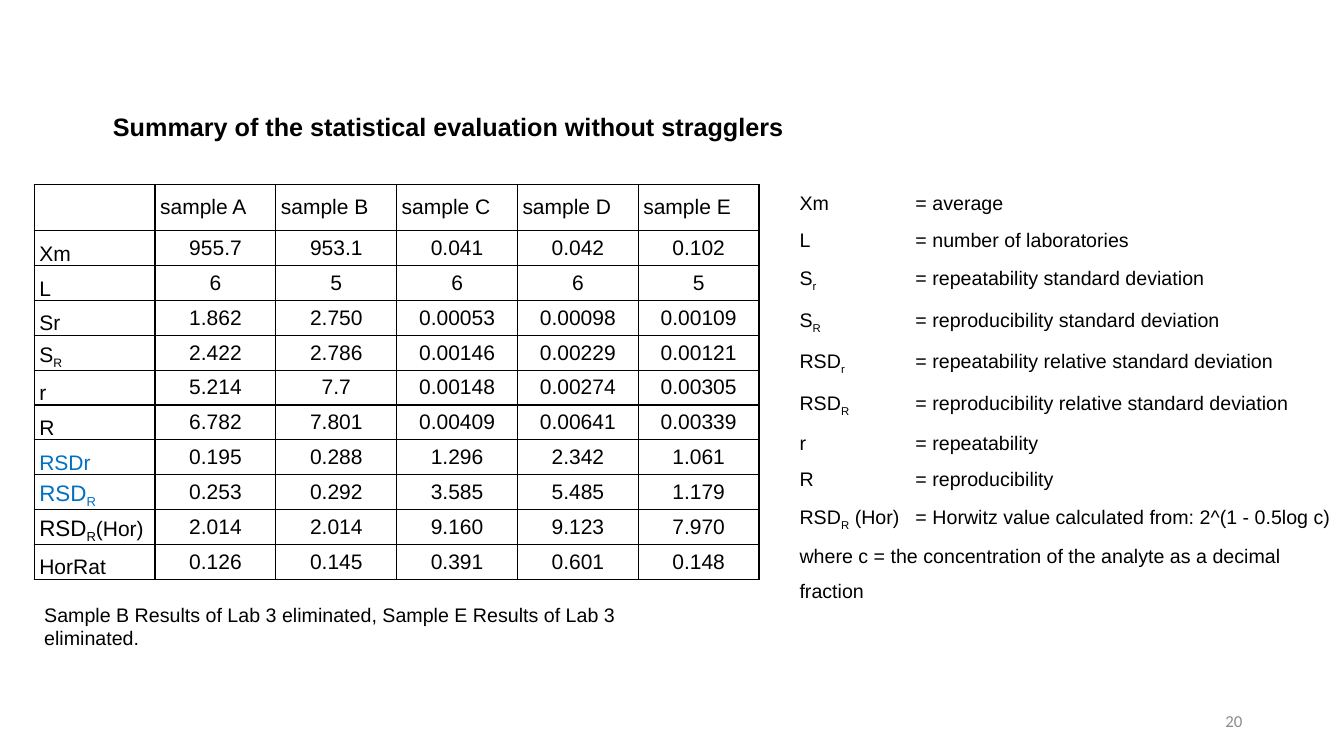
from dataclasses import dataclass

from lxml.etree import SubElement
from pptx import Presentation
from pptx.dml.color import RGBColor
from pptx.enum.text import MSO_ANCHOR as Anchor, MSO_AUTO_SIZE as AutoSize, PP_ALIGN as Align
from pptx.oxml.ns import qn
from pptx.util import Emu, Pt

EMU_PER_PX = 9144
BLACK = "000000"
BLUE = "0070C0"
GREY = "8C8C8C"
SUBSCRIPT_MARK = "~"


@dataclass(frozen=True)
class Box:
    left: int
    top: int
    width: int
    height: int


@dataclass(frozen=True)
class ResultRow:
    label: str
    values: str
    color: str = BLACK
    size: int = 15
    suffix: str = ""


@dataclass(frozen=True)
class Definition:
    symbol: str
    meaning: str


SLIDE_WIDTH, SLIDE_HEIGHT = 1333, 750
TITLE_BOX = Box(102, 105, 839, 40)
TABLE_BOX = Box(34, 183, 719, 392)
NOTE_BOX = Box(34, 593, 667, 57)
LEGEND_BOX = Box(646, 173, 688, 410)
NUMBER_BOX = Box(942, 695, 300, 40)
HEADER_HEIGHT = 46
LEGEND_INSET = 147
LEGEND_TAB = 115

SAMPLES = [f"sample {letter}" for letter in "ABCDE"]
RESULTS = [
    ResultRow("Xm", "955.7 953.1 0.041 0.042 0.102"),
    ResultRow("L", "6 5 6 6 5"),
    ResultRow("Sr", "1.862 2.750 0.00053 0.00098 0.00109"),
    ResultRow("S~R~", "2.422 2.786 0.00146 0.00229 0.00121"),
    ResultRow("r", "5.214 7.7 0.00148 0.00274 0.00305"),
    ResultRow("R", "6.782 7.801 0.00409 0.00641 0.00339"),
    ResultRow("RSDr", "0.195 0.288 1.296 2.342 1.061", color=BLUE),
    ResultRow("RSD~R~", "0.253 0.292 3.585 5.485 1.179", color=BLUE, size=16),
    ResultRow("RSD~R~", "2.014 2.014 9.160 9.123 7.970", size=16, suffix="(Hor)"),
    ResultRow("HorRat", "0.126 0.145 0.391 0.601 0.148"),
]
DEFINITIONS = [
    Definition("Xm", "average"),
    Definition("L", "number of laboratories"),
    Definition("S~r~", "repeatability standard deviation"),
    Definition("S~R~", "reproducibility standard deviation"),
    Definition("RSD~r~", "repeatability relative standard deviation"),
    Definition("RSD~R~", "reproducibility relative standard deviation"),
    Definition("r", "repeatability"),
    Definition("R", "reproducibility"),
    Definition("RSD~R~ (Hor)", "Horwitz value calculated from: 2^(1 - 0.5log c) "
               "where c = the concentration of the analyte as a decimal fraction"),
]


def px(length: int) -> Emu:
    return Emu(length * EMU_PER_PX)


def rgb(color: str) -> RGBColor:
    return RGBColor.from_string(color)


def write_text(paragraph, text: str, *, size: int, color: str = BLACK, bold: bool = False,
               font: str = "Arial", align: Align = Align.LEFT) -> None:
    paragraph.alignment = align
    for index, part in enumerate(text.split(SUBSCRIPT_MARK)):
        if not part:
            continue
        run = paragraph.add_run()
        run.text = part
        run.font.name = font
        run.font.size = Pt(size)
        run.font.bold = bold
        run.font.color.rgb = rgb(color)
        if index % 2:
            run._r.get_or_add_rPr().set("baseline", "-25000")


def place(shape, box: Box) -> None:
    shape.left, shape.top = px(box.left), px(box.top)
    shape.width, shape.height = px(box.width), px(box.height)


def add_text_frame(slide, box: Box):
    shape = slide.shapes.add_textbox(px(box.left), px(box.top), px(box.width), px(box.height))
    shape.text_frame.word_wrap = True
    return shape.text_frame


def add_title(slide) -> None:
    title = slide.shapes.title
    place(title, TITLE_BOX)
    frame = title.text_frame
    frame.word_wrap = True
    frame.auto_size = AutoSize.SHAPE_TO_FIT_TEXT
    frame.vertical_anchor = Anchor.TOP
    write_text(frame.paragraphs[0], "Summary of the statistical evaluation without stragglers",
               size=18, bold=True)


def format_cell(cell, anchor: Anchor, side_margin: int) -> None:
    cell.vertical_anchor = anchor
    cell.margin_left = cell.margin_right = px(side_margin)
    cell.margin_top = cell.margin_bottom = 0
    properties = cell._tc.get_or_add_tcPr()
    for side in ("L", "R", "T", "B"):
        border = SubElement(properties, qn(f"a:ln{side}"), w=str(Pt(1)))
        fill = SubElement(border, qn("a:solidFill"))
        SubElement(fill, qn("a:srgbClr"), val=BLACK)
    cell.fill.background()


def add_results_table(slide) -> None:
    row_count, column_count = len(RESULTS) + 1, len(SAMPLES) + 1
    box = TABLE_BOX
    table = slide.shapes.add_table(row_count, column_count, px(box.left), px(box.top),
                                   px(box.width), px(box.height)).table
    table.first_row = table.horz_banding = False
    for column in table.columns:
        column.width = px(box.width) // column_count
    for row in table.rows:
        row.height = px(box.height - HEADER_HEIGHT) // len(RESULTS)
    table.rows[0].height = px(HEADER_HEIGHT)

    format_cell(table.cell(0, 0), Anchor.MIDDLE, 5)
    for column_index, sample in enumerate(SAMPLES, 1):
        cell = table.cell(0, column_index)
        format_cell(cell, Anchor.MIDDLE, 5)
        write_text(cell.text_frame.paragraphs[0], sample, size=15)
    for row_index, result in enumerate(RESULTS, 1):
        label_cell = table.cell(row_index, 0)
        format_cell(label_cell, Anchor.BOTTOM, 5)
        label = label_cell.text_frame.paragraphs[0]
        write_text(label, result.label, size=result.size, color=result.color)
        write_text(label, result.suffix, size=15, color=result.color)
        for column_index, value in enumerate(result.values.split(), 1):
            cell = table.cell(row_index, column_index)
            format_cell(cell, Anchor.MIDDLE, 7)
            write_text(cell.text_frame.paragraphs[0], value, size=15, align=Align.CENTER)


def add_legend(slide) -> None:
    frame = add_text_frame(slide, LEGEND_BOX)
    frame.margin_left = px(LEGEND_INSET)
    for index, definition in enumerate(DEFINITIONS):
        paragraph = frame.add_paragraph() if index else frame.paragraphs[0]
        paragraph.line_spacing = 1.5
        paragraph.space_before = Pt(1)
        tabs = SubElement(paragraph._p.get_or_add_pPr(), qn("a:tabLst"))
        SubElement(tabs, qn("a:tab"), pos=str(px(LEGEND_TAB)), algn="l")
        write_text(paragraph, f"{definition.symbol}\t= {definition.meaning}", size=14)


def main() -> None:
    presentation = Presentation()
    presentation.slide_width, presentation.slide_height = px(SLIDE_WIDTH), px(SLIDE_HEIGHT)
    slide = presentation.slides.add_slide(presentation.slide_layouts[5])
    add_title(slide)
    add_results_table(slide)
    note = add_text_frame(slide, NOTE_BOX)
    write_text(note.paragraphs[0], "Sample B Results of Lab 3 eliminated, "
               "Sample E Results of Lab 3 eliminated.", size=14)
    add_legend(slide)
    number = add_text_frame(slide, NUMBER_BOX)
    number.vertical_anchor = Anchor.MIDDLE
    write_text(number.paragraphs[0], "20", size=12, color=GREY, font="Calibri", align=Align.RIGHT)
    presentation.save("out.pptx")


if __name__ == "__main__":
    main()
